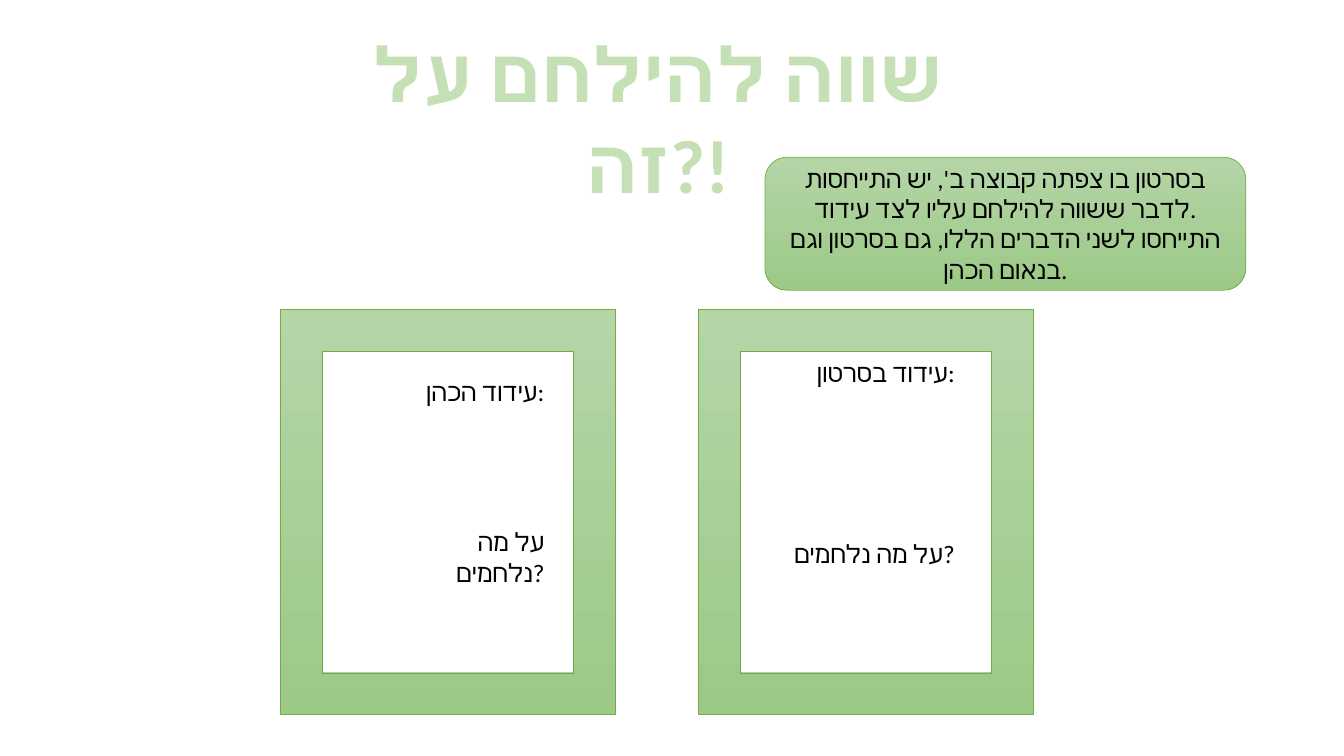
from lxml.etree import SubElement
from pptx import Presentation
from pptx.dml.color import RGBColor
from pptx.enum.shapes import MSO_SHAPE as Shape
from pptx.enum.text import MSO_ANCHOR as Anchor, MSO_AUTO_SIZE as AutoSize, PP_ALIGN as Align
from pptx.oxml.ns import qn
from pptx.util import Pt


def rgb(value):
    return RGBColor.from_string(value)


def write(p, text, font="Calibri", size=18, color="000000", bold=False, align=Align.CENTER, after=0):
    p.alignment = align
    p.space_after = Pt(after)
    r = p.add_run()
    r.text = text
    r.font.name = font
    r.font.size = Pt(size)
    r.font.bold = bold
    r.font.color.rgb = rgb(color)
    SubElement(r._r.get_or_add_rPr(), qn("a:cs"), typeface=font)


class SlideBuilder:
    """Holds the green style and the slide being filled."""

    top_green, bottom_green, edge = "B5D5A7", "9CC987", "70AD47"
    line_height = 21.5

    def __init__(self, s):
        self.s = s

    def green_shape(self, kind, *box):
        sp = self.s.shapes.add_shape(kind, *map(Pt, box))
        sp.shadow.inherit = False
        sp.fill.gradient()
        sp.fill.gradient_angle = 270
        for stop, color in zip(sp.fill.gradient_stops, (self.top_green, self.bottom_green)):
            stop.color.rgb = rgb(color)
        sp.line.color.rgb = rgb(self.edge)
        sp.line.width = Pt(0.5)
        return sp

    def fill_text(self, tf, texts, **style):
        tf.word_wrap = True
        for i, text in enumerate(texts):
            p = tf.paragraphs[0] if i == 0 else tf.add_paragraph()
            write(p, text, **style)

    def callout(self, texts, *box):
        tf = self.green_shape(Shape.ROUNDED_RECTANGLE, *box).text_frame
        tf.vertical_anchor = Anchor.MIDDLE
        self.fill_text(tf, texts)

    def text(self, texts, *box, **style):
        tf = self.s.shapes.add_textbox(*map(Pt, box)).text_frame
        tf.auto_size = AutoSize.SHAPE_TO_FIT_TEXT
        self.fill_text(tf, texts, **style)
        return tf

    def questions(self, heading, gap_lines, *box):
        tf = self.text([heading, "על מה נלחמים?"], *box, align=Align.RIGHT)
        tf.paragraphs[0].space_after = Pt(gap_lines * self.line_height)


def main():
    prs = Presentation()
    prs.slide_width, prs.slide_height = Pt(960), Pt(540)
    slide = SlideBuilder(prs.slides.add_slide(prs.slide_layouts[6]))
    slide.callout(
        [
            "בסרטון בו צפתה קבוצה ב', יש התייחסות לדבר ששווה להילחם עליו לצד עידוד.",
            "התייחסו לשני הדברים הללו, גם בסרטון וגם בנאום הכהן.",
        ],
        546.5, 112.3, 343.4, 95,
    )
    slide.text(["שווה להילחם על זה?!"], 222.5, 15.8, 495.4, 72.7, size=54, color="C5E0B4", bold=True)
    for left in (499, 200.2):
        slide.green_shape(Shape.FRAME, left, 221, 239, 289.5)
    slide.questions("עידוד בסרטון:", 5, 546.5, 252, 142.6, 225.4)
    slide.questions("עידוד הכהן:", 4, 269.3, 265, 126.7, 203.8)
    prs.save("out.pptx")


if __name__ == "__main__":
    main()
